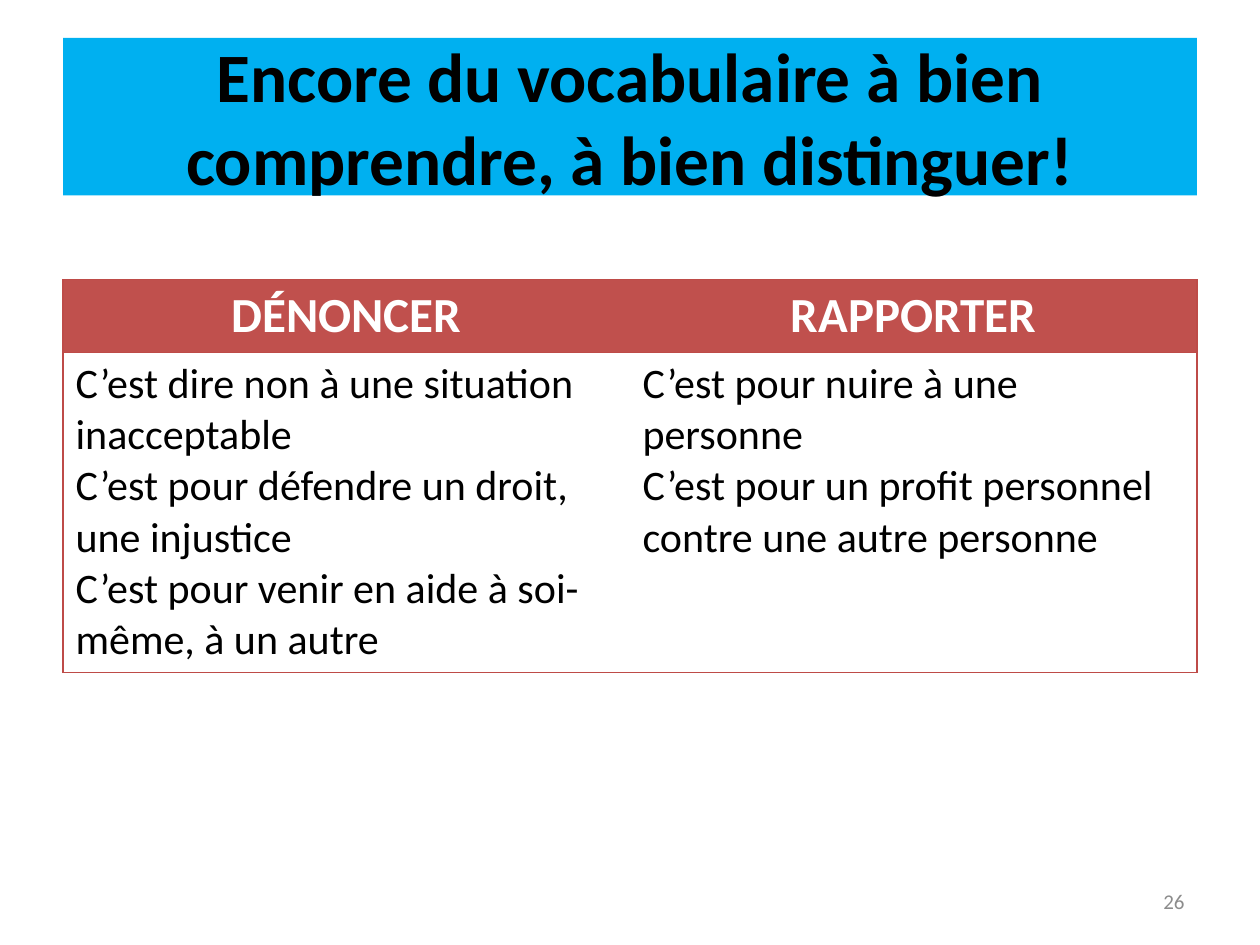
from lxml.etree import SubElement
from pptx import Presentation
from pptx.dml.color import RGBColor
from pptx.enum.text import MSO_ANCHOR, MSO_AUTO_SIZE, PP_ALIGN
from pptx.oxml.ns import qn
from pptx.util import Pt

COLORS = {
    "banner": "00B0F0",
    "header": "C0504D",
    "border": "BE4B48",
    "text": "000000",
    "header_text": "FFFFFF",
    "number": "8C8C8C",
}
FONT = "Calibri"
LEFT, WIDTH = 36, 648

VOCABULARY = {
    "DÉNONCER": [
        "C’est dire non à une situation inacceptable",
        "C’est pour défendre un droit, une injustice",
        "C’est pour venir en aide à soi-même, à un autre",
    ],
    "RAPPORTER": [
        "C’est pour nuire à une personne",
        "C’est pour un profit personnel contre une autre personne",
    ],
}


def color(name):
    return RGBColor.from_string(COLORS[name])


def write_text(text_frame, lines, size, color_name, bold=False, align=PP_ALIGN.LEFT):
    text_frame.text = "\n".join(lines)
    for paragraph in text_frame.paragraphs:
        paragraph.alignment = align
        for run in paragraph.runs:
            run.font.name = FONT
            run.font.size = Pt(size)
            run.font.bold = bold
            run.font.color.rgb = color(color_name)


def set_borders(cell, visible_sides):
    """Draw the given sides of a cell and hide the others."""
    properties = cell._tc.get_or_add_tcPr()
    for side in "LRTB":
        line = SubElement(properties, qn(f"a:ln{side}"), w=str(Pt(0.75)))
        if side in visible_sides:
            fill = SubElement(line, qn("a:solidFill"))
            SubElement(fill, qn("a:srgbClr"), val=COLORS["border"])
        else:
            SubElement(line, qn("a:noFill"))


def add_title(slide, text):
    title = slide.shapes.title
    title.left, title.top, title.width, title.height = Pt(LEFT), Pt(21.6), Pt(WIDTH), Pt(90)
    title.fill.solid()
    title.fill.fore_color.rgb = color("banner")
    write_text(title.text_frame, [text], 39.6, "text", True, PP_ALIGN.CENTER)
    title.text_frame.vertical_anchor = MSO_ANCHOR.MIDDLE
    title.text_frame.auto_size = MSO_AUTO_SIZE.NONE


def add_vocabulary_table(slide, vocabulary):
    row_heights = (41, 180)
    table = slide.shapes.add_table(
        2, len(vocabulary), Pt(LEFT), Pt(159.8), Pt(WIDTH), Pt(sum(row_heights))
    ).table
    table.horz_banding = False
    for row, height in zip(table.rows, row_heights):
        row.height = Pt(height)

    for column, (word, meanings) in enumerate(vocabulary.items()):
        header, body = table.cell(0, column), table.cell(1, column)
        outer_side = "L" if column == 0 else "R"
        for cell in (header, body):
            set_borders(cell, "TB" + outer_side)
        header.fill.solid()
        header.fill.fore_color.rgb = color("header")
        body.fill.background()
        write_text(header.text_frame, [word], 28, "header_text", True, PP_ALIGN.CENTER)
        write_text(body.text_frame, meanings, 24, "text")


def add_slide_number(slide, number):
    box = slide.shapes.add_textbox(Pt(516), Pt(500.5), Pt(168), Pt(28.75))
    box.text_frame.word_wrap = True
    box.text_frame.vertical_anchor = MSO_ANCHOR.MIDDLE
    write_text(box.text_frame, [number], 12, "number", align=PP_ALIGN.RIGHT)


def main():
    presentation = Presentation()
    presentation.slide_width, presentation.slide_height = Pt(720), Pt(540)
    title_only = presentation.slide_layouts[5]
    slide = presentation.slides.add_slide(title_only)

    # Banner, comparison of the two words, page number
    add_title(slide, "Encore du vocabulaire à bien comprendre, à bien distinguer!")
    add_vocabulary_table(slide, VOCABULARY)
    add_slide_number(slide, "26")

    presentation.save("out.pptx")


if __name__ == "__main__":
    main()
